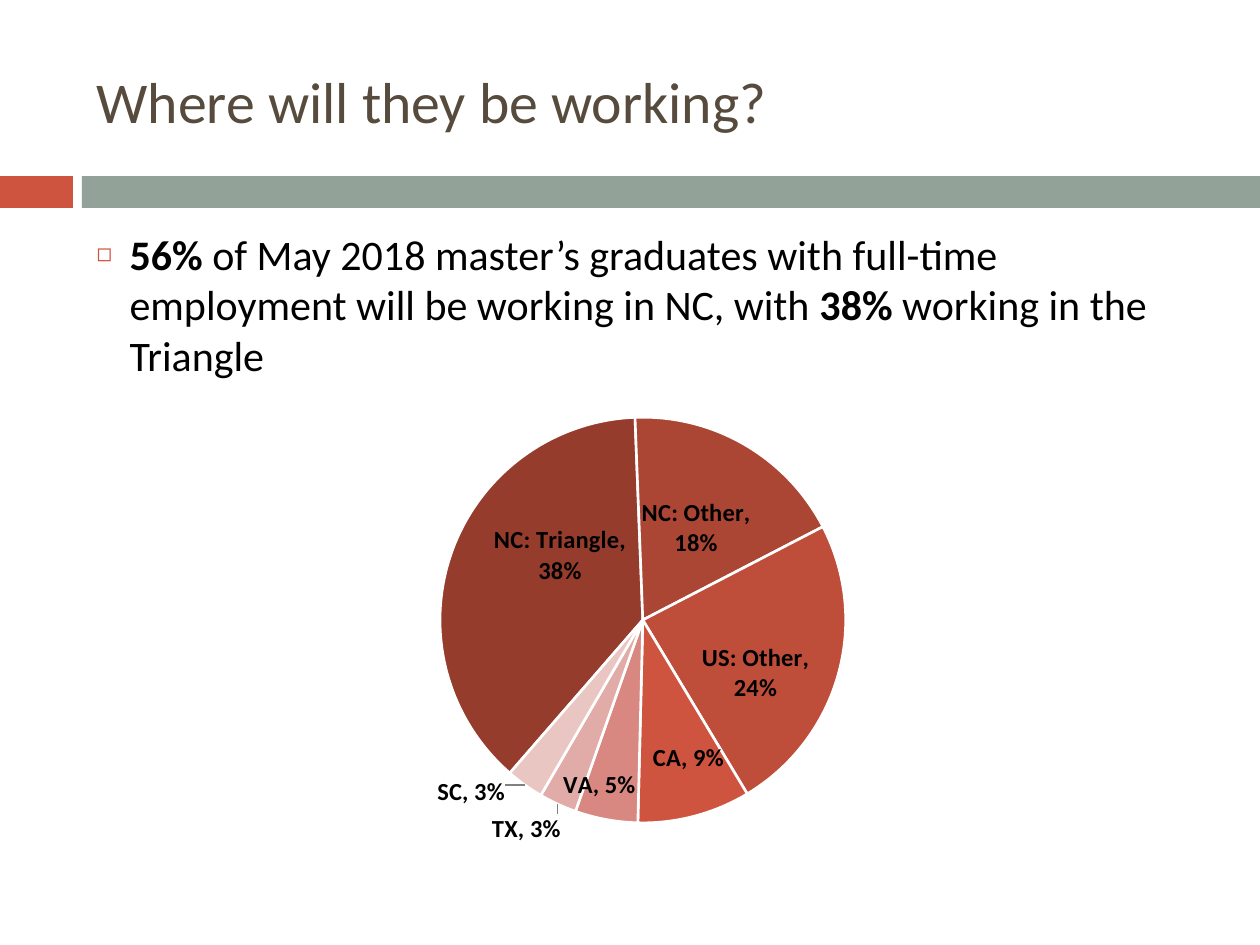
"""Build the slide on where graduates will be working, with a pie chart of places."""
from typing import NamedTuple

from pptx import Presentation
from pptx.chart.data import CategoryChartData
from pptx.dml.color import RGBColor
from pptx.enum.chart import XL_CHART_TYPE, XL_LABEL_POSITION
from pptx.enum.shapes import MSO_SHAPE
from pptx.enum.text import MSO_ANCHOR, PP_ALIGN
from pptx.oxml import parse_xml
from pptx.oxml.ns import nsdecls
from pptx.util import Emu, Pt

PIE = XL_CHART_TYPE.PIE
CENTER = XL_LABEL_POSITION.CENTER
RECTANGLE = MSO_SHAPE.RECTANGLE
MIDDLE, TOP = MSO_ANCHOR.MIDDLE, MSO_ANCHOR.TOP
LEFT = PP_ALIGN.LEFT

FONT = "Calibri"
PX_PER_INCH = 126
COLORS = {
    "accent": "CF543F", "band": "93A299", "title": "564B3C",
    "text": "000000", "white": "FFFFFF", "leader": "808080",
}


class Box(NamedTuple):
    left: int
    top: int
    width: int
    height: int


class Bar(NamedTuple):
    box: Box
    color: str


class TextRun(NamedTuple):
    text: str
    bold: bool = False


class Slice(NamedTuple):
    name: str
    percent: int
    color: str
    label_dx: int
    label_dy: int
    separator: str = ", "


BARS = [
    Bar(Box(0, 176, 73, 32), "accent"),
    Bar(Box(82, 176, 1178, 32), "band"),
]
TITLE_BOX = Box(84, 32, 1124, 136)
BODY_BOX = Box(84, 222, 1124, 620)
CHART_BOX = Box(251, 349, 761, 525)
PIE_BOX = Box(189, 68, 406, 406)
FIRST_SLICE_ANGLE = 221
TWO_LINES = ",\n"
BODY_RUNS = [
    TextRun("56% ", True),
    TextRun("of May 2018 master’s graduates with full-time employment "
            "will be working in NC, with "),
    TextRun("38% ", True),
    TextRun("working in the Triangle"),
]
SLICES = [
    Slice("NC: Triangle", 38, "953C2D", 13, -31, TWO_LINES),
    Slice("NC: Other", 18, "AC4634", 2, -4, TWO_LINES),
    Slice("US: Other", 24, "BE4D3A", 15, 25, TWO_LINES),
    Slice("CA", 9, "CF543F", 20, 40),
    Slice("VA", 5, "D88880", -25, 65),
    Slice("TX", 3, "E1ABA7", -74, 117),
    Slice("SC", 3, "EAC6C3", -113, 89),
]


def px(length: int) -> Emu:
    return Emu(round(length * 914400 / PX_PER_INCH))


def rgb(name: str) -> RGBColor:
    return RGBColor.from_string(COLORS[name])


def style_font(font, size: int, color: str, bold: bool = False) -> None:
    font.name, font.size, font.bold = FONT, Pt(size), bold
    font.color.rgb = rgb(color)


def add_bar(slide, bar: Bar) -> None:
    shape = slide.shapes.add_shape(RECTANGLE, *map(px, bar.box))
    shape.shadow.inherit = False
    shape.fill.solid()
    shape.fill.fore_color.rgb = rgb(bar.color)
    shape.line.fill.background()


def fill_placeholder(shape, box: Box, runs: list[TextRun], size: int,
                     color: str, anchor: MSO_ANCHOR):
    shape.left, shape.top, shape.width, shape.height = map(px, box)
    shape.text_frame.vertical_anchor = anchor
    paragraph = shape.text_frame.paragraphs[0]
    paragraph.alignment = LEFT
    for text_run in runs:
        run = paragraph.add_run()
        run.text = text_run.text
        style_font(run.font, size, color, text_run.bold)
    return paragraph


def add_bullet(paragraph, indent: int) -> None:
    paragraph.space_before = Pt(5.2)
    properties = paragraph._p.get_or_add_pPr()
    properties.set("marL", str(px(indent)))
    properties.set("indent", str(-px(indent)))
    for xml in (
        f'<a:buClr {nsdecls("a")}><a:srgbClr val="{COLORS["accent"]}"/></a:buClr>',
        f'<a:buSzPct {nsdecls("a")} val="60000"/>',
        f'<a:buChar {nsdecls("a")} char="◻"/>',
    ):
        properties.append(parse_xml(xml))


def manual_layout(x: float, y: float, before: str = "", after: str = ""):
    return parse_xml(
        f'<c:layout {nsdecls("c")}><c:manualLayout>{before}'
        f'<c:x val="{x:.3f}"/><c:y val="{y:.3f}"/>{after}'
        '</c:manualLayout></c:layout>')


def place_pie(chart) -> None:
    width, height = CHART_BOX.width, CHART_BOX.height
    modes = ('<c:layoutTarget val="inner"/><c:xMode val="edge"/>'
             '<c:yMode val="edge"/>')
    size = (f'<c:w val="{PIE_BOX.width / width:.3f}"/>'
            f'<c:h val="{PIE_BOX.height / height:.3f}"/>')
    plot_area = chart._chartSpace.chart.plotArea
    for layout in plot_area.findall("{*}layout"):
        plot_area.remove(layout)
    plot_area.insert(0, manual_layout(PIE_BOX.left / width,
                                      PIE_BOX.top / height, modes, size))
    plot_area.find("{*}pieChart").append(parse_xml(
        f'<c:firstSliceAng {nsdecls("c")} val="{FIRST_SLICE_ANGLE}"/>'))


def format_slice(series, index: int, item: Slice) -> None:
    point = series.points[index]
    point.format.fill.solid()
    point.format.fill.fore_color.rgb = RGBColor.from_string(item.color)
    point.format.line.color.rgb = rgb("white")
    point.format.line.width = Pt(1.5)
    label = point.data_label
    style_font(label.font, 14, "text", True)
    label.position = CENTER
    element = label._dLbl
    element.insert(1, manual_layout(item.label_dx / CHART_BOX.width,
                                    item.label_dy / CHART_BOX.height))
    for tag, shown in (("showVal", 0), ("showCatName", 1), ("showPercent", 1)):
        element.find("{*}" + tag).set("val", str(shown))
    element.append(parse_xml(
        f'<c:separator {nsdecls("c")}>{item.separator}</c:separator>'))


def add_pie(slide) -> None:
    data = CategoryChartData()
    data.categories = [item.name for item in SLICES]
    data.add_series("Series 1", [item.percent for item in SLICES])
    chart = slide.shapes.add_chart(PIE, *map(px, CHART_BOX), data).chart
    chart.has_legend = False
    chart.has_title = False
    style_font(chart.font, 10, "text")
    place_pie(chart)
    series = chart.plots[0].series[0]
    labels = series.data_labels
    style_font(labels.font, 14, "text", True)
    labels.show_value = False
    labels.show_category_name = True
    labels.show_percentage = True
    labels.number_format = "0%"
    labels.number_format_is_linked = False
    labels._element.append(parse_xml(
        f'<c:leaderLines {nsdecls("c", "a")}><c:spPr><a:ln w="9525"><a:solidFill>'
        f'<a:srgbClr val="{COLORS["leader"]}"/></a:solidFill></a:ln></c:spPr>'
        '</c:leaderLines>'))
    for index, item in enumerate(SLICES):
        format_slice(series, index, item)


def main() -> None:
    presentation = Presentation()
    presentation.slide_width, presentation.slide_height = px(1260), px(945)
    slide = presentation.slides.add_slide(presentation.slide_layouts[1])
    for bar in BARS:
        add_bar(slide, bar)
    fill_placeholder(slide.shapes.title, TITLE_BOX,
                     [TextRun("Where will they be working?")], 33, "title", MIDDLE)
    body = fill_placeholder(slide.placeholders[1], BODY_BOX, BODY_RUNS,
                            24, "text", TOP)
    add_bullet(body, 33)
    add_pie(slide)
    presentation.save("out.pptx")


if __name__ == "__main__":
    main()
